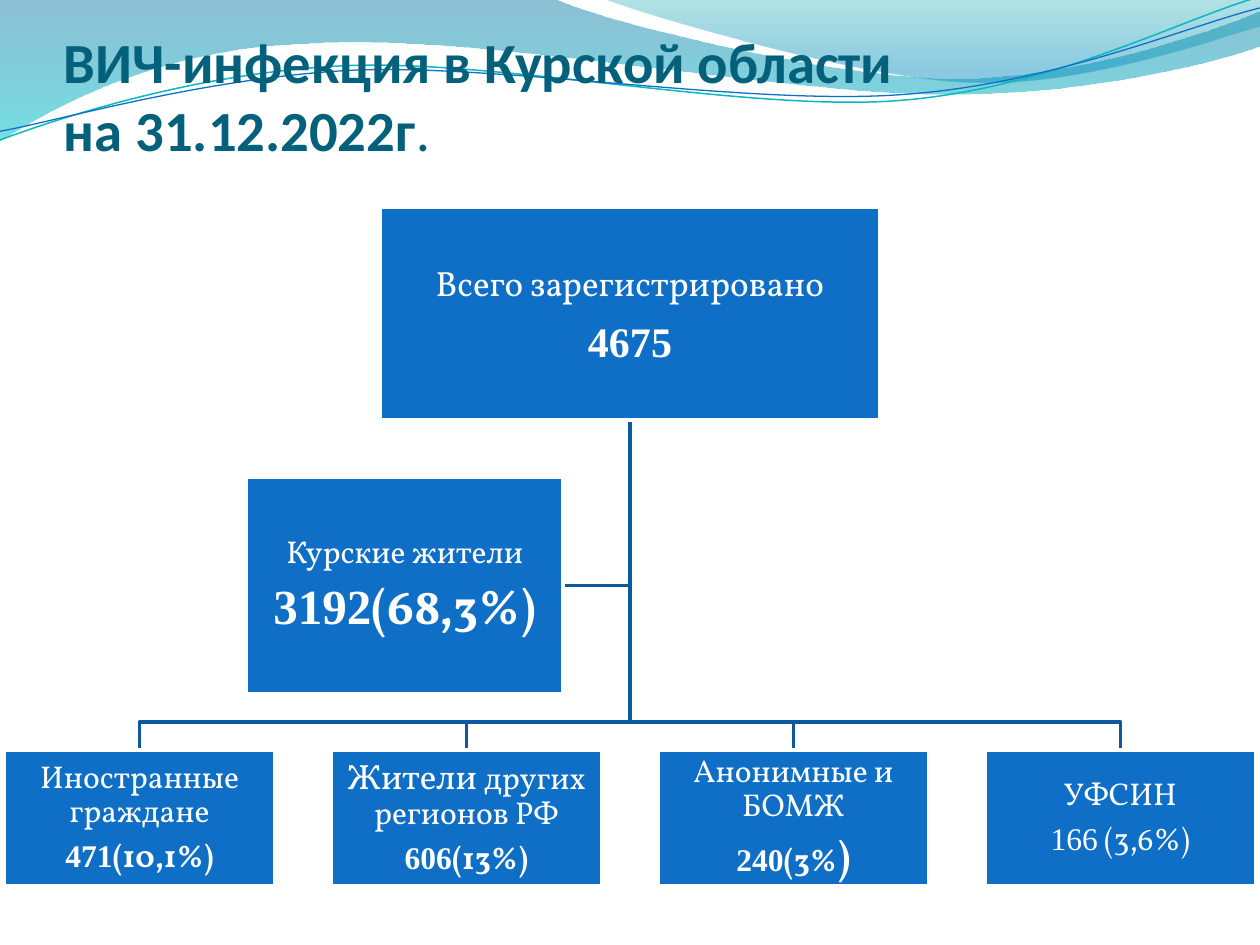
from lxml.etree import SubElement
from pptx import Presentation
from pptx.dml.color import RGBColor
from pptx.enum.shapes import MSO_SHAPE
from pptx.enum.text import MSO_ANCHOR, PP_ALIGN
from pptx.oxml.ns import qn
from pptx.util import Pt

COLORS = {
    "box": "0F6FC6", "branch": "0C599F", "white": "FFFFFF", "title": "04617B",
    "teal line": "0AB8BF", "blue line": "0F6FC6",
}
SERIF, TIMES = "Vollkorn", "Times New Roman"


def add_runs(paragraph, runs, color):
    """Each run is (text, size, font name, bold)."""
    for text, size, name, bold in runs:
        run = paragraph.add_run()
        run.text = text
        for key, value in {"size": Pt(size), "name": name, "bold": bold}.items():
            setattr(run.font, key, value)
        run.font.color.rgb = RGBColor.from_string(COLORS[color])


def add_outline(start, segments, close=False):
    """Two numbers make a straight segment, six a cubic curve."""
    points = [(Pt(x), Pt(y)) for segment in segments
              for x, y in zip(segment[::2], segment[1::2])]
    builder = slide.shapes.build_freeform(Pt(start[0]), Pt(start[1]))
    builder.add_line_segments(points, close=close)
    shape = builder.convert_to_shape()
    shape.shadow.inherit = False
    straight = iter(list(shape.element.iter(qn("a:lnTo"))))
    for segment in segments:
        first = next(straight)
        if len(segment) == 6:
            first.tag = qn("a:cubicBezTo")
            for _ in range(2):
                extra = next(straight)
                first.append(extra[0])
                extra.getparent().remove(extra)
    return shape


presentation = Presentation()
presentation.slide_width, presentation.slide_height = Pt(720), Pt(540)
slide = presentation.slides.add_slide(presentation.slide_layouts[6])

# Filled waves: start, segments, gradient stops (position, colour, opacity in %)
filled_waves = [
    ((0, 0),
     [(317, -0.7), (343, 12, 478, 45, 546, 45), (614, 45, 690, 19, 720, 6.5),
      (721, 26), (708, 32, 626, 55, 537, 54), (447, 54, 275, 20, 185, 24.5),
      (93, 26, 33, 60, -0.7, 81), (0, 0)],
     [(0, "0074A1", 45), (1, "00C6CF", 55)]),
    ((345, -0.7),
     [(366, 8, 491, 45, 554, 47), (616, 50, 692, 23, 720, 15), (720, 0),
      (345, -0.7)],
     [(0, "00A1A9", 30), (0.8, "008BBF", 45)]),
]
for start, segments, stops in filled_waves:
    shape = add_outline(start, segments, close=True)
    shape.line.fill.background()
    shape.fill.gradient()
    shape.fill.gradient_angle = 270
    for stop, (position, color, _) in zip(shape.fill.gradient_stops, stops):
        stop.position = position
        stop.color.rgb = RGBColor.from_string(color)
    for node, (_, _, opacity) in zip(shape.element.iter(qn("a:srgbClr")), stops):
        SubElement(node, qn("a:alpha"), val=str(opacity * 1000))

# Chart geometry
center, bar_y, child_top = 360, 412.6, 428.7
child_centers = [center + (i - 1.5) * 186.8 for i in range(4)]
child_width, child_height = 154.6, 77.2
total_bottom, side_right, side_middle = 240, 321.8, 334.6

# Open lines: thin waves, then the bent branches from the total to each box
open_lines = [
    ((0, 80), [(35, 67, 114, 41, 199, 37.5), (284, 34, 427, 64, 513, 57.5),
               (600, 51, 675, 11, 718.5, -1.5)], "teal line", 0.85),
    ((0, 75), [(34, 69, 118, 44, 204, 40), (290, 37, 430, 60.5, 516, 54),
               (602, 48, 678, 15, 720, 4.5)], "blue line", 0.75),
    ((center, total_bottom),
     [(center, side_middle), (side_right, side_middle)], "branch", 2),
]
for x in reversed(child_centers):
    open_lines.append(((center, total_bottom),
                       [(center, bar_y), (x, bar_y), (x, child_top)], "branch", 2))
for start, segments, color, width in open_lines:
    shape = add_outline(start, segments)
    shape.fill.background()
    shape.line.color.rgb = RGBColor.from_string(COLORS[color])
    shape.line.width = Pt(width)

# Boxes: left, top, width, height, line spacing, paragraphs of runs
boxes = [
    (217.2, 118.5, 285.6, 121.5, 1.0,
     [[("Всего зарегистрировано", 20, SERIF, False)], [("4675", 24, TIMES, True)]]),
]
child_texts = [
    [[("Иностранные граждане", 18, SERIF, False)],
     [("471", 18, TIMES, True), ("(10,1%)", 18, SERIF, True)]],
    [[("Жители ", 20, SERIF, False), ("других регионов РФ", 18, SERIF, False)],
     [("606", 18, TIMES, True), ("(13%)", 18, SERIF, True)]],
    [[("Анонимные и БОМЖ", 18, SERIF, False)],
     [("240", 18, TIMES, True), ("(3%", 18, SERIF, True), (")", 24, SERIF, True)]],
    [[("УФСИН", 18, SERIF, False)],
     [("166", 18, TIMES, False), (" (3,6%)", 18, SERIF, False)]],
]
for x, text in zip(child_centers, child_texts):
    boxes.append((x - child_width / 2, child_top, child_width, child_height, 0.9, text))
boxes.append(
    (140.8, 272.8, 181, 123.6, 0.9,
     [[("Курские жители", 18, SERIF, False)],
      [("3192", 28, TIMES, True), ("(68,3%)", 28, SERIF, True)]]))

frame_format = {
    "word_wrap": True, "vertical_anchor": MSO_ANCHOR.MIDDLE, "margin_left": Pt(0.9),
    "margin_right": Pt(0.9), "margin_top": Pt(0.9), "margin_bottom": Pt(0.9),
}
for *place, spacing, paragraphs in boxes:
    shape = slide.shapes.add_shape(MSO_SHAPE.RECTANGLE, *map(Pt, place))
    shape.shadow.inherit = False
    shape.fill.solid()
    shape.fill.fore_color.rgb = RGBColor.from_string(COLORS["box"])
    shape.line.color.rgb = RGBColor.from_string(COLORS["white"])
    shape.line.width = Pt(2)
    frame = shape.text_frame
    for key, value in frame_format.items():
        setattr(frame, key, value)
    paragraph_format = {"alignment": PP_ALIGN.CENTER, "line_spacing": spacing,
                        "space_after": Pt(6.5)}
    for index, runs in enumerate(paragraphs):
        paragraph = frame.add_paragraph() if index else frame.paragraphs[0]
        for key, value in paragraph_format.items():
            setattr(paragraph, key, value)
        add_runs(paragraph, runs, "white")

# Title
title = slide.shapes.add_textbox(Pt(36.5), Pt(55.4), Pt(653.5), Pt(90))
title_format = {"word_wrap": True, "vertical_anchor": MSO_ANCHOR.BOTTOM,
                "margin_left": 0, "margin_right": 0,
                "margin_top": Pt(3.6), "margin_bottom": Pt(52.4)}
for key, value in title_format.items():
    setattr(title.text_frame, key, value)
paragraph = title.text_frame.paragraphs[0]
add_runs(paragraph, [("ВИЧ-инфекция в Курской области", 32.4, "Calibri", True)], "title")
paragraph.add_line_break()
add_runs(paragraph, [("на 31.12.2022г", 32.4, "Calibri", True),
                     (".", 32.4, "Calibri", False)], "title")

presentation.save("out.pptx")
